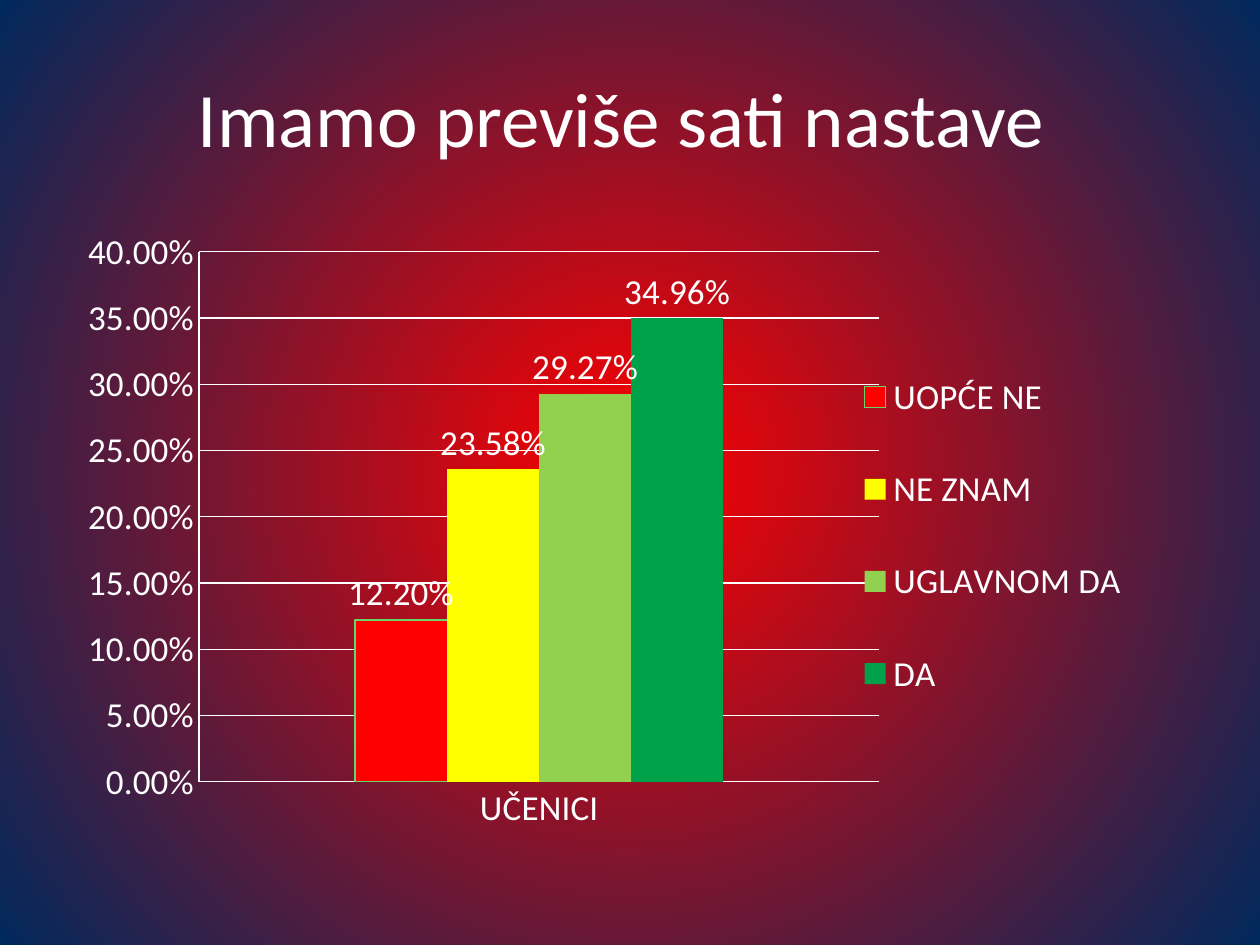
import pptx
import pptx.util
import pptx.chart.data
import pptx.dml.color
import pptx.enum.chart
import pptx.enum.text
import pptx.oxml
import pptx.oxml.ns
from lxml import etree

Pt = pptx.util.Pt
qn = pptx.oxml.ns.qn
FACE = "Calibri"
FORMAT = "0.00%"
HUES = {"text": "FFFFFF", "glow": "FF0000", "edge": "00295C", "rim": "68D66B",
        "no": "FF0000", "unsure": "FFFF00", "mostly": "92D050", "yes": "00A249"}
# Answer, share of pupils, colour
BARS = [("UOPĆE NE", 0.122, "no"), ("NE ZNAM", 0.2358, "unsure"),
        ("UGLAVNOM DA", 0.2927, "mostly"), ("DA", 0.3496, "yes")]


def hue(name):
    return pptx.dml.color.RGBColor.from_string(HUES[name])


def style(item, values):
    for key, value in values.items():
        setattr(item, key, value)


def type_up(font, size):
    style(font, {"name": FACE, "size": Pt(size), "bold": False})
    font.color.rgb = hue("text")


def trace(line):
    line.color.rgb = hue("text")
    line.width = Pt(0.75)


def lay_out(part, index, box, inner=False):
    """Place a chart part by fractions of the chart: left, top, width, height."""
    for old in part.findall(qn("c:layout")):
        part.remove(old)
    layout = etree.Element(qn("c:layout"))
    manual = etree.SubElement(layout, qn("c:manualLayout"))
    rules = [("layoutTarget", "inner")] if inner else []
    rules += [("xMode", "edge"), ("yMode", "edge")]
    rules += zip("xywh", box)
    for tag, value in rules:
        etree.SubElement(manual, qn("c:" + tag)).set("val", str(value))
    part.insert(index, layout)


def add_glow(slide):
    fill = slide.background.fill
    fill.gradient()
    for stop, name, spot in zip(fill.gradient_stops, ("glow", "edge"), (0, 1)):
        stop.color.rgb = hue(name)
        stop.position = spot
    # Turn the linear gradient into a circle around the centre
    grad = next(slide._element.iter(qn("a:gradFill")))
    for line in grad.findall(qn("a:lin")):
        grad.remove(line)
    ring = etree.Element(qn("a:path"), {"path": "circle"})
    sides = {side: "50000" for side in "ltrb"}
    etree.SubElement(ring, qn("a:fillToRect"), sides)
    grad.find(qn("a:gsLst")).addnext(ring)


def add_title(slide, left, top, width, height):
    title = slide.shapes.title
    style(title, {"left": left, "top": top, "width": width, "height": height})
    frame = title.text_frame
    frame.text = "Imamo previše sati nastave "
    frame.vertical_anchor = pptx.enum.text.MSO_ANCHOR.MIDDLE
    para = frame.paragraphs[0]
    para.alignment = pptx.enum.text.PP_ALIGN.CENTER
    type_up(para.runs[0].font, 44)


def add_bars(slide, left, top, width, height):
    kinds = pptx.enum.chart
    data = pptx.chart.data.CategoryChartData(number_format=FORMAT)
    data.categories = ["UČENICI"]
    for name, share, _ in BARS:
        data.add_series(name, [share])
    chart = slide.shapes.add_chart(kinds.XL_CHART_TYPE.COLUMN_CLUSTERED,
                                   left, top, width, height, data).chart
    type_up(chart.font, 10)
    style(chart, {"has_title": False, "has_legend": True})

    # Axes and grid
    for axis in (chart.category_axis, chart.value_axis):
        axis.major_tick_mark = kinds.XL_TICK_MARK.NONE
        type_up(axis.tick_labels.font, 20)
        trace(axis.format.line)
    scale = chart.value_axis
    style(scale, {"minimum_scale": 0, "maximum_scale": 0.4, "major_unit": 0.05,
                  "has_major_gridlines": True})
    style(scale.tick_labels, {"number_format": FORMAT,
                              "number_format_is_linked": False})
    trace(scale.major_gridlines.format.line)

    # Bars and their labels
    plot = chart.plots[0]
    style(plot, {"gap_width": 339, "overlap": 0, "vary_by_categories": False})
    for bar, (_, _, name) in zip(plot.series, BARS):
        bar.format.fill.solid()
        bar.format.fill.fore_color.rgb = hue(name)
        labels = bar.data_labels
        style(labels, {"show_value": True, "number_format": FORMAT,
                       "number_format_is_linked": False,
                       "position": kinds.XL_LABEL_POSITION.OUTSIDE_END})
        type_up(labels.font, 20)
    rim = plot.series[0].format.line
    rim.color.rgb = hue("rim")
    rim.width = Pt(0.75)

    # Legend, which overlaps the right end of the grid
    legend = chart.legend
    style(legend, {"position": kinds.XL_LEGEND_POSITION.RIGHT,
                   "include_in_layout": False})
    type_up(legend.font, 20)
    lay_out(legend._element, 1, (0.69, 0.17, 0.26, 0.67))
    area = next(chart._chartSpace.iter(qn("c:plotArea")))
    lay_out(area, 0, (0.12, 0.05, 0.6, 0.85), inner=True)


def main():
    deck = pptx.Presentation()
    style(deck, {"slide_width": Pt(720), "slide_height": Pt(540)})
    slide = deck.slides.add_slide(deck.slide_layouts[5])
    add_glow(slide)
    add_title(slide, Pt(36), Pt(21.6), Pt(648), Pt(90))
    add_bars(slide, Pt(36), Pt(126), Pt(648), Pt(356.4))
    deck.save("out.pptx")


if __name__ == "__main__":
    main()
